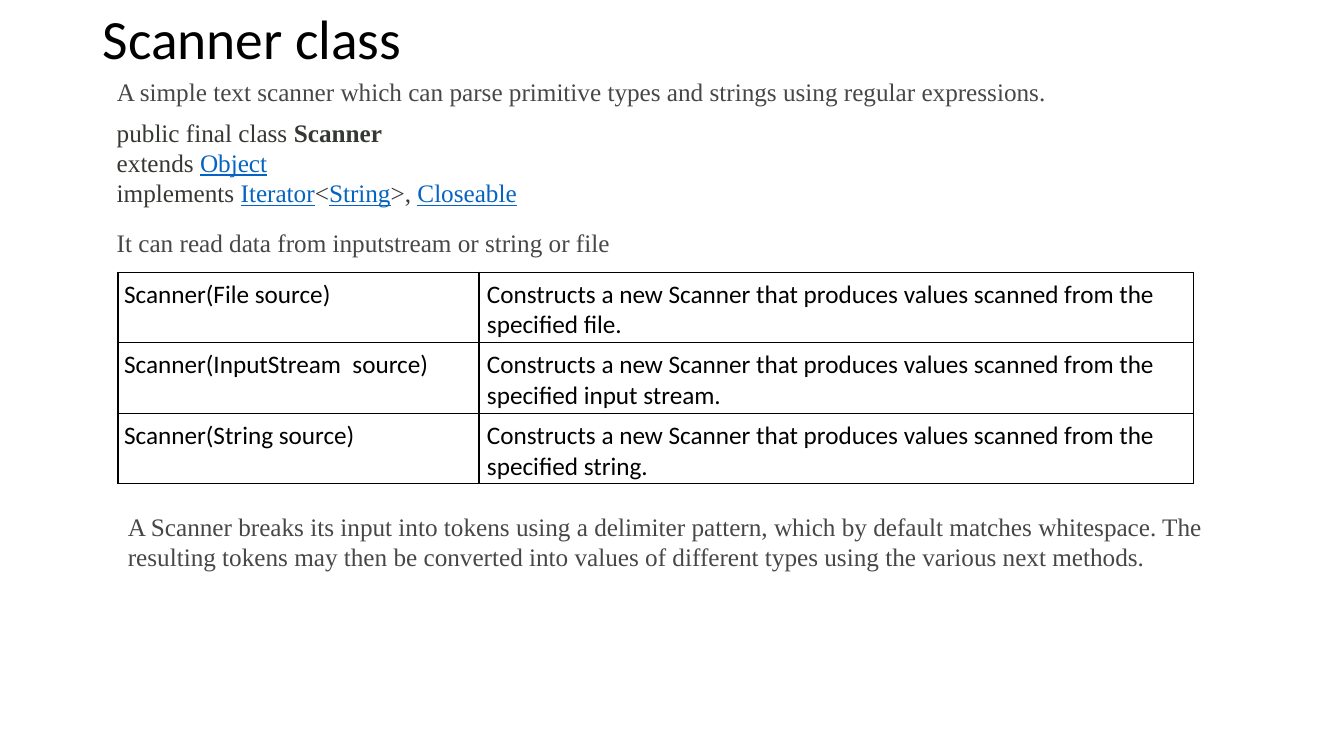
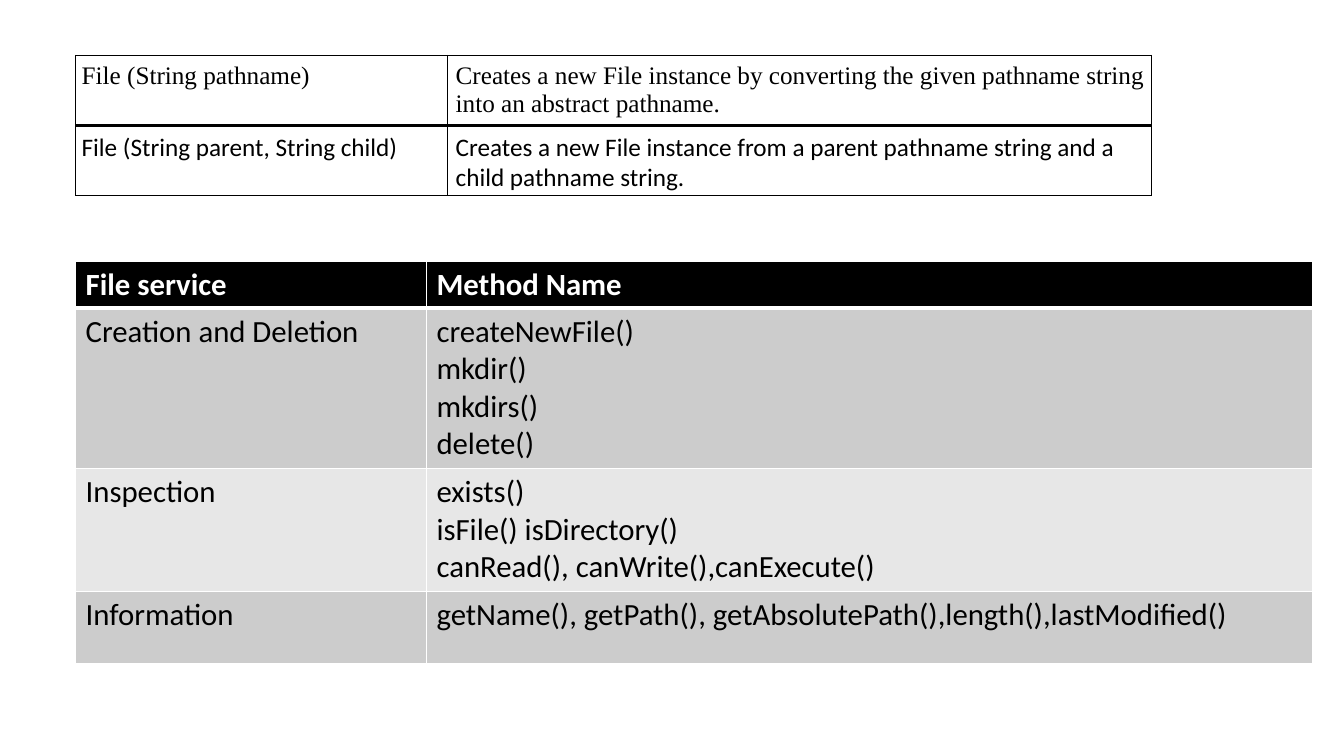
from dataclasses import dataclass

from lxml import etree
from pptx import Presentation, util as u
from pptx.dml.color import RGBColor
from pptx.enum import text
from pptx.oxml.ns import qn


@dataclass(frozen=True)
class Theme:
    sans: str = "Calibri"
    serif: str = "Times New Roman"
    black: str = "000000"
    white: str = "FFFFFF"
    body: str = "474747"
    code: str = "353833"
    link: str = "0563C1"
    dark_band: str = "CCCCCC"
    light_band: str = "E7E7E7"
    title_size: float = 39.6
    method_size: float = 22
    body_size: float = 18


THEME = Theme()
CELL = u.Inches(0.1)  # one square of the layout grid

deck = Presentation()
deck.slide_width, deck.slide_height = u.Inches(13.33), u.Inches(7.5)
blank = deck.slide_layouts[6]


def write(frame, paras, font, size, color, bold=False, before=0, after=0):
    """Fill a frame; each paragraph is a list of (text, kind) runs."""
    frame.word_wrap = True
    for index, runs in enumerate(paras):
        para = frame.paragraphs[0] if index == 0 else frame.add_paragraph()
        para.space_before, para.space_after = u.Pt(before), u.Pt(after)
        for words, kind in runs:
            span = para.add_run()
            span.text = words
            span.font.name, span.font.size = font, u.Pt(size)
            span.font.bold = bold or kind == "bold"
            span.font.underline = kind == "link"
            span.font.color.rgb = RGBColor.from_string(THEME.link if kind == "link" else color)


def add_grid(page, left, top, columns, heights, line, fills, header=False):
    """Add a ruled table in grid units, with one fill (or None) for each row."""
    table = page.shapes.add_table(
        len(heights), len(columns), round(left * CELL), round(top * CELL),
        round(sum(columns) * CELL), round(sum(heights) * CELL)).table
    table.first_row, table.horz_banding = header, False
    for column, width in zip(table.columns, columns):
        column.width = round(width * CELL)
    for number, (row, height, fill) in enumerate(zip(table.rows, heights, fills)):
        row.height = round(height * CELL)
        for cell in row.cells:
            properties = cell._tc.get_or_add_tcPr()
            for side in "LRTB":
                thick = header and (number, side) in ((0, "B"), (1, "T"))
                border = etree.SubElement(properties, qn(f"a:ln{side}"), w=str(u.Pt(3 if thick else 1)))
                paint = etree.SubElement(border, qn("a:solidFill"))
                etree.SubElement(paint, qn("a:srgbClr"), val=line)
            if fill:
                cell.fill.solid()
                cell.fill.fore_color.rgb = RGBColor.from_string(fill)
            else:
                cell.fill.background()
    return table


# Slide 1: the Scanner class
scanner_page = deck.slides.add_slide(blank)
title = scanner_page.shapes.add_textbox(*(round(n * CELL) for n in (9.2, 1.4, 115, 5.4)))
title.text_frame.vertical_anchor = text.MSO_ANCHOR.MIDDLE
write(title.text_frame, [[("Scanner class", "")]], THEME.sans, THEME.title_size, THEME.black)
title.text_frame.paragraphs[0].line_spacing = 0.9

declaration = [
    [("public final class ", ""), ("Scanner", "bold")],
    [("extends ", ""), ("Object", "link")],
    [("implements ", ""), ("Iterator", "link"), ("<", ""), ("String", "link"),
     (">, ", ""), ("Closeable", "link")],
]
passages = [
    ((10.6, 7.1, 109.5, 4), THEME.body,
     [[("A simple text scanner which can parse primitive types and strings using regular expressions.", "")]]),
    ((10.6, 11.1, 83, 10.1), THEME.code, declaration),
    ((10.6, 22.1, 66.7, 4), THEME.body,
     [[("It can read data from inputstream or string or file", "")]]),
    ((11.7, 50.2, 115, 7.1), THEME.body,
     [[("A Scanner breaks its input into tokens using a delimiter pattern, which by default matches "
        "whitespace. The resulting tokens may then be converted into values of different types "
        "using the various next methods.", "")]]),
]
for place, color, paras in passages:
    box = scanner_page.shapes.add_textbox(*(round(n * CELL) for n in place))
    write(box.text_frame, paras, THEME.serif, THEME.body_size, color)
    box.text_frame.auto_size = text.MSO_AUTO_SIZE.SHAPE_TO_FIT_TEXT

scanner_rows = [
    ("Scanner(File source)",
     "Constructs a new Scanner that produces values scanned from the specified file."),
    ("Scanner(InputStream  source)",
     "Constructs a new Scanner that produces values scanned from the specified input stream."),
    ("Scanner(String source)",
     "Constructs a new Scanner that produces values scanned from the specified string."),
]

# Slide 2: the File class
file_page = deck.slides.add_slide(blank)
services = [
    ("File service", ["Method Name"]),
    ("Creation and Deletion", ["createNewFile()", "mkdir()", "mkdirs()", "delete()"]),
    ("Inspection", ["exists()", "isFile() isDirectory()", "canRead(), canWrite(),canExecute()"]),
    ("Information", ["getName(), getPath(), getAbsolutePath(),length(),lastModified()"]),
]
service_table = add_grid(
    file_page, 7.5, 25.9, (34.8, 87.9), (4.6, 15.9, 12.2, 7.2), THEME.white,
    (THEME.black, THEME.dark_band, THEME.light_band, THEME.dark_band), header=True)
for number, (service, methods) in enumerate(services):
    for column, lines in enumerate(([service], methods)):
        write(service_table.cell(number, column).text_frame, [[(line, "")] for line in lines],
              THEME.sans, THEME.method_size,
              THEME.black if number else THEME.white, bold=number == 0)

path_row = ("File (String pathname)",
            "Creates a new File instance by converting the given pathname string into an abstract pathname.")
child_row = ("File (String parent, String child)",
             "Creates a new File instance from a parent pathname string and a child pathname string.")

# Constructor tables of both slides
constructors = [
    (scanner_page, 11.7, 27, (35.8, 70.9), 6.93, THEME.white, THEME.sans, scanner_rows),
    (file_page, 7.5, 5.5, (36.9, 69.8), 6.5, None, THEME.serif, [path_row]),
    (file_page, 7.5, 12.4, (36.9, 69.8), 6.9, None, THEME.sans, [child_row]),
]
for page, left, top, columns, height, fill, font, rows in constructors:
    count = len(rows)
    table = add_grid(page, left, top, columns, [height] * count, THEME.black, [fill] * count)
    for number, row in enumerate(rows):
        for column, words in enumerate(row):
            cell = table.cell(number, column)
            cell.margin_left = u.Inches((0.06, 0.08)[column])
            cell.margin_top = u.Inches(0.07)
            cell.margin_right = cell.margin_bottom = u.Inches(0.03)
            write(cell.text_frame, [[(words, "")]], font, THEME.body_size, THEME.black,
                  before=(0, 2.2)[column], after=(0, 1.5)[column])

deck.save("out.pptx")
